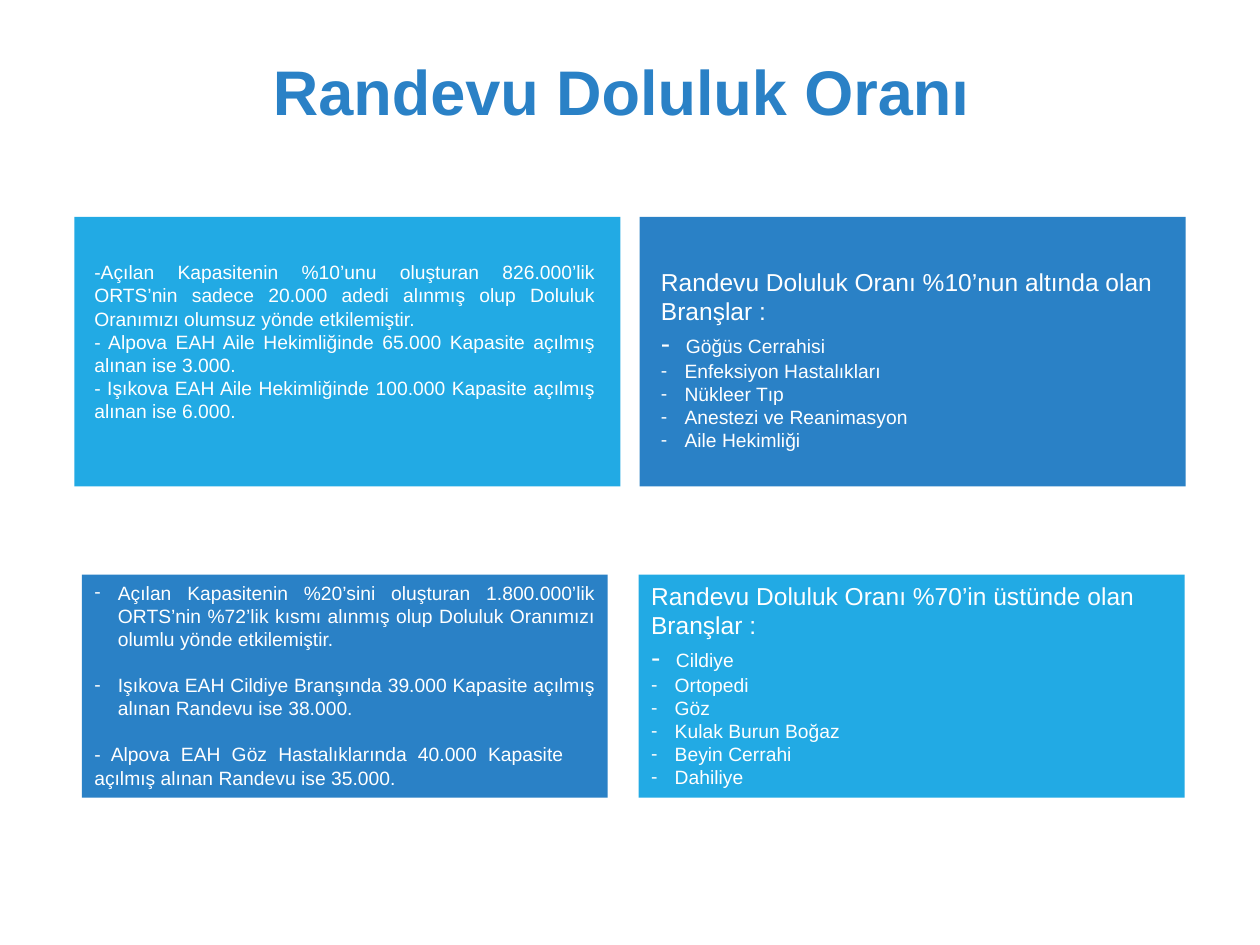
from pptx import Presentation
from pptx.dml.color import RGBColor
from pptx.enum import shapes, text
from pptx.oxml.xmlchemy import OxmlElement
from pptx.util import Pt

SKY, BLUE, WHITE = "22AAE4", "2A81C6", "FFFFFF"
FONT = "Arial"
HANG = 13.5


def paint(color, value):
    color.rgb = RGBColor.from_string(value)


def fill_box(slide, box, color):
    rect = slide.shapes.add_shape(shapes.MSO_SHAPE.RECTANGLE, *map(Pt, box))
    rect.shadow.inherit = False
    rect.fill.solid()
    paint(rect.fill.fore_color, color)
    rect.line.fill.background()
    frame = rect.text_frame
    frame.word_wrap = True
    frame.vertical_anchor = text.MSO_ANCHOR.TOP
    return frame


def add_para(frame, words="", size=11, align=text.PP_ALIGN.LEFT):
    first = frame.paragraphs[0]
    para = frame.add_paragraph() if first.runs else first
    if words:
        para.add_run().text = words
    para.alignment = align
    para.font.size = Pt(size)
    para.font.name = FONT
    paint(para.font.color, WHITE)
    return para


def hang(para, width):
    props = para._p.get_or_add_pPr()
    props.set("marL", str(Pt(width)))
    props.set("indent", str(-Pt(width)))
    return props


def add_dash(para):
    props = hang(para, HANG)
    for tag, key, value in (("a:buFont", "typeface", FONT), ("a:buChar", "char", "-")):
        mark = OxmlElement(tag)
        mark.set(key, value)
        props.insert_element_before(mark, "a:tabLst", "a:defRPr", "a:extLst")


def add_title(slide, box, words):
    frame = slide.shapes.add_textbox(*map(Pt, box)).text_frame
    frame.word_wrap = True
    frame.vertical_anchor = text.MSO_ANCHOR.MIDDLE
    para = add_para(frame, words, 36, text.PP_ALIGN.CENTER)
    para.font.bold = True
    paint(para.font.color, BLUE)


def add_notes(slide, box, color, notes, dashed=0, gap=0, right=0):
    """Justified notes; the first `dashed` get a bullet, the last a right margin."""
    frame = fill_box(slide, box, color)
    for i, words in enumerate(notes):
        para = add_para(frame, words, align=text.PP_ALIGN.JUSTIFY)
        if i < dashed:
            add_dash(para)
        if i < len(notes) - 1:
            para.space_after = Pt(gap)
    para._p.get_or_add_pPr().set("marR", str(Pt(right)))


def add_list(slide, box, color, head, items):
    """Heading and dashed items, the first with a larger dash."""
    frame = fill_box(slide, box, color)
    add_para(frame, head, 14)
    lead = add_para(frame)
    hang(lead, 14.2)
    for words, size in (("-\t", 16), (items[0], 11)):
        run = lead.add_run()
        run.text = words
        run.font.size = Pt(size)
    for words in items[1:]:
        add_dash(add_para(frame, words))


def main():
    deck = Presentation()
    deck.slide_width, deck.slide_height = Pt(720), Pt(540)
    slide = deck.slides.add_slide(deck.slide_layouts[6])

    for left, color in ((42.5, SKY), (365.5, BLUE)):
        fill_box(slide, (left, 124, 312, 154), color)
    add_title(slide, (0, 15.5, 710, 72), "Randevu Doluluk Oranı")

    add_notes(slide, (46.8, 145.4, 300.5, 101), SKY, [
        "-Açılan Kapasitenin %10’unu oluşturan 826.000’lik ORTS’nin sadece "
        "20.000 adedi alınmış olup Doluluk Oranımızı olumsuz yönde etkilemiştir.",
        "- Alpova EAH Aile Hekimliğinde 65.000 Kapasite açılmış alınan ise 3.000.",
        "- Işıkova EAH Aile Hekimliğinde 100.000 Kapasite açılmış alınan ise 6.000.",
    ])
    add_list(slide, (370.6, 149, 300, 114), BLUE,
             "Randevu Doluluk Oranı %10’nun altında olan Branşlar :",
             ["Göğüs Cerrahisi", "Enfeksiyon Hastalıkları", "Nükleer Tıp",
              "Anestezi ve Reanimasyon", "Aile Hekimliği"])
    add_list(slide, (365, 328.4, 312, 127.4), SKY,
             "Randevu Doluluk Oranı %70’in üstünde olan Branşlar :",
             ["Cildiye", "Ortopedi", "Göz", "Kulak Burun Boğaz",
              "Beyin Cerrahi", "Dahiliye"])
    add_notes(slide, (46.8, 328.4, 300.5, 127.4), BLUE, [
        "Açılan Kapasitenin %20’sini oluşturan 1.800.000’lik ORTS’nin %72’lik "
        "kısmı alınmış olup Doluluk Oranımızı olumlu yönde etkilemiştir.",
        "Işıkova EAH Cildiye Branşında 39.000 Kapasite açılmış alınan Randevu "
        "ise 38.000.",
        "- Alpova EAH Göz Hastalıklarında 40.000 Kapasite açılmış alınan "
        "Randevu ise 35.000.",
    ], dashed=2, gap=13.2, right=18)

    deck.save("out.pptx")


if __name__ == "__main__":
    main()
